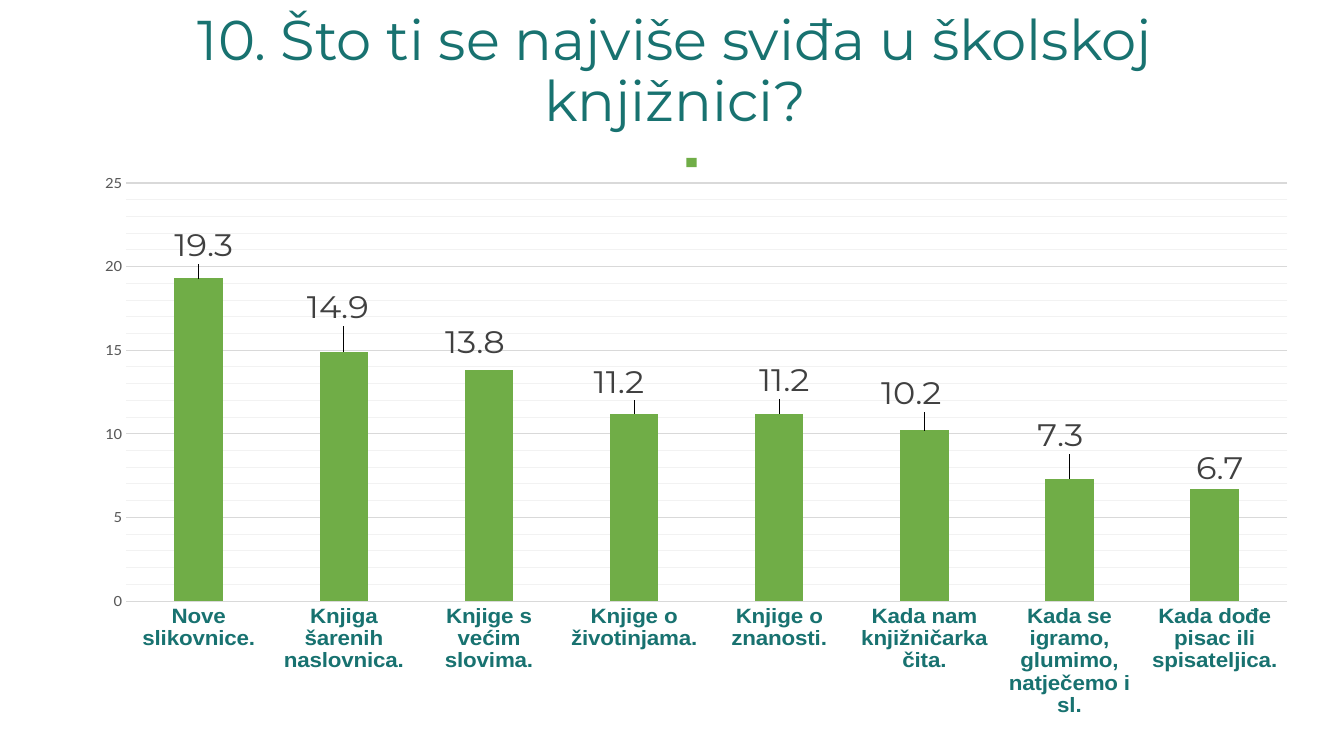
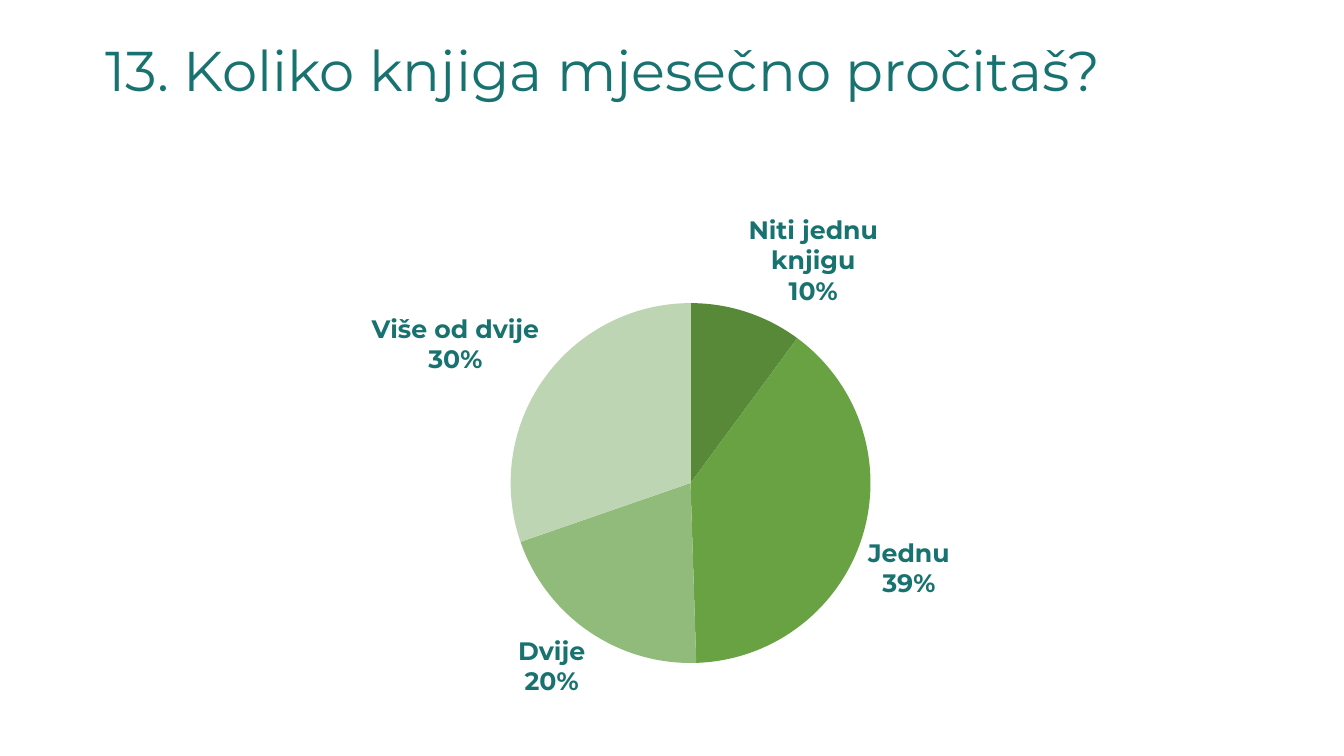
from lxml import etree
from pptx import Presentation
from pptx import util as u
from pptx.chart.data import CategoryChartData
from pptx.dml.color import RGBColor
from pptx.enum import chart as ch
from pptx.enum import text
from pptx.oxml.ns import qn

TEAL, GREEN, GREY, DARK = "187270", "70AD47", "595959", "404040"
GRID, FINE_GRID = "D9D9D9", "F2F2F2"


def rgb(value):
    return RGBColor.from_string(value)


def style_font(font, name, size, color, bold=False):
    font.name, font.size, font.bold = name, u.Pt(size), bold
    font.color.rgb = rgb(color)


def style_line(line, color, width=0.75):
    line.color.rgb = rgb(color)
    line.width = u.Pt(width)


def style_minor_grid(chart, color, width=0.75):
    """Minor gridlines have no formatting in python-pptx's public methods."""
    grid = chart.element.xpath(".//c:valAx/c:minorGridlines")[0]
    shape = etree.SubElement(grid, qn("c:spPr"))
    line = etree.SubElement(shape, qn("a:ln"), w=str(u.Pt(width)))
    fill = etree.SubElement(line, qn("a:solidFill"))
    etree.SubElement(fill, qn("a:srgbClr"), val=color)


class SurveyDeck:
    """The survey's style together with the slide being filled."""

    def __init__(self):
        self.deck = Presentation()
        self.deck.slide_width, self.deck.slide_height = u.Cm(33.87), u.Cm(19.05)
        self.page = None
        self.size = {}

    def add_page(self, question, align=text.PP_ALIGN.LEFT):
        self.page = self.deck.slides.add_slide(self.deck.slide_layouts[5])
        title = self.page.shapes.title
        title.left, title.top = u.Cm(2.41), u.Cm(0)
        title.width, title.height = u.Cm(29.21), u.Cm(3.68)
        frame = title.text_frame
        frame.text = question
        frame.word_wrap = True
        frame.auto_size = text.MSO_AUTO_SIZE.NONE
        frame.vertical_anchor = text.MSO_ANCHOR.MIDDLE
        para = frame.paragraphs[0]
        para.alignment, para.line_spacing = align, 0.9
        style_font(para.font, "Montserrat", 40, TEAL)

    def add_chart(self, kind, answers, left, top, width, height):
        data = CategoryChartData()
        data.categories = list(answers)
        data.add_series(" ", list(answers.values()))
        frame = self.page.shapes.add_chart(
            kind, u.Cm(left), u.Cm(top), u.Cm(width), u.Cm(height), data)
        self.size = {"x": width, "y": height, "w": width, "h": height}
        chart = frame.chart
        chart.has_title = chart.has_legend = False
        style_font(chart.font, "Calibri", 10, "000000")
        return chart

    def place(self, parent, index, modes=(), **lengths):
        """Insert a manual layout; lengths are in cm within the current chart."""
        for old in parent.findall(qn("c:layout")):
            parent.remove(old)
        layout = etree.Element(qn("c:layout"))
        manual = etree.SubElement(layout, qn("c:manualLayout"))
        settings = [*modes, *((key, f"{length / self.size[key]:.4f}")
                              for key, length in lengths.items())]
        for name, value in settings:
            etree.SubElement(manual, qn(f"c:{name}")).set("val", value)
        parent.insert(index, layout)

    def place_plot(self, chart, **lengths):
        modes = [("layoutTarget", "inner"), ("xMode", "edge"), ("yMode", "edge")]
        self.place(chart.element.xpath("c:chart/c:plotArea")[0], 0, modes, **lengths)

    def add_columns(self, answers, shifts):
        """Column chart whose value labels are shifted by (x, y) cm."""
        chart = self.add_chart(ch.XL_CHART_TYPE.COLUMN_CLUSTERED, answers,
                               2.26, 2.01, 30.73, 16.05)
        plot = chart.plots[0]
        plot.gap_width, plot.vary_by_categories = 199, False
        series = plot.series[0]
        series.format.fill.solid()
        series.format.fill.fore_color.rgb = rgb(GREEN)
        for index in range(len(answers)):
            label = series.points[index].data_label
            style_font(label.font, "Montserrat", 24, DARK)
            label.position = ch.XL_LABEL_POSITION.OUTSIDE_END
        for label, (x, y) in zip(chart.element.xpath(".//c:dLbl"), shifts):
            self.place(label, 1, x=x, y=y)

        names, values = chart.category_axis, chart.value_axis
        for axis in (names, values):
            axis.major_tick_mark = axis.minor_tick_mark = ch.XL_TICK_MARK.NONE
        style_font(names.tick_labels.font, "Arial", 16, TEAL, True)
        style_line(names.format.line, GRID)
        style_font(values.tick_labels.font, "Calibri", 12, GREY)
        values.format.line.fill.background()
        values.minimum_scale, values.maximum_scale = 0, 25
        values.major_unit, values.minor_unit = 5, 1
        values.has_major_gridlines = values.has_minor_gridlines = True
        style_line(values.major_gridlines.format.line, GRID)
        style_minor_grid(chart, FINE_GRID)

        chart.has_legend = True
        legend = chart.legend
        legend.position = ch.XL_LEGEND_POSITION.TOP
        legend.include_in_layout = False
        style_font(legend.font, "Calibri", 12, GREY)
        edges = [("xMode", "edge"), ("yMode", "edge")]
        self.place(chart.element.xpath("c:chart/c:legend")[0], 1, edges, x=14.9, y=1.9)
        self.place_plot(chart, x=0.92, y=2.81, w=29.26, h=11.38)

    def add_pie(self, answers, colors):
        chart = self.add_chart(ch.XL_CHART_TYPE.PIE, answers, 3.02, 3.18, 27, 15.06)
        plot = chart.plots[0]
        plot.vary_by_categories = True
        for index, color in enumerate(colors):
            fill = plot.series[0].points[index].format.fill
            fill.solid()
            fill.fore_color.rgb = rgb(color)
        plot.has_data_labels = True
        labels = plot.data_labels
        labels.show_category_name = labels.show_percentage = True
        labels.show_value = False
        labels.number_format, labels.number_format_is_linked = "0%", False
        labels.position = ch.XL_LABEL_POSITION.OUTSIDE_END
        style_font(labels.font, "Montserrat", 18, TEAL, True)
        leader = chart.element.xpath(".//c:pieChart/c:dLbls/c:showBubbleSize")[0]
        separator = etree.Element(qn("c:separator"))
        separator.text = "\n"
        leader.addnext(separator)
        self.place_plot(chart, x=9.85, y=4.46, w=9.07, h=9.07)


def main():
    survey = SurveyDeck()
    survey.add_page("10. Što ti se najviše sviđa u školskoj knjižnici?",
                    text.PP_ALIGN.CENTER)
    survey.add_columns(
        {"Nove slikovnice.": 19.3,
         "Knjiga šarenih naslovnica.": 14.9,
         "Knjige s većim slovima.": 13.8,
         "Knjige o životinjama.": 11.2,
         "Knjige o znanosti.": 11.2,
         "Kada nam knjižničarka čita.": 10.2,
         "Kada se igramo, glumimo, natječemo i sl.": 7.3,
         "Kada dođe pisac ili spisateljica.": 6.7},
        [(0.13, -0.28), (-0.15, -0.6), (-0.35, -0.15), (-0.38, -0.25),
         (0.13, -0.3), (-0.33, -0.4), (-0.23, -0.58), (0.13, 0.05)])

    survey.add_page("13. Koliko knjiga mjesečno pročitaš?")
    survey.add_pie(
        {"Niti jednu knjigu": 10, "Jednu": 39, "Dvije": 20, "Više od dvije": 30},
        ["588938", "69A242", "90BB7B", "BED5B4"])
    survey.deck.save("out.pptx")


if __name__ == "__main__":
    main()
